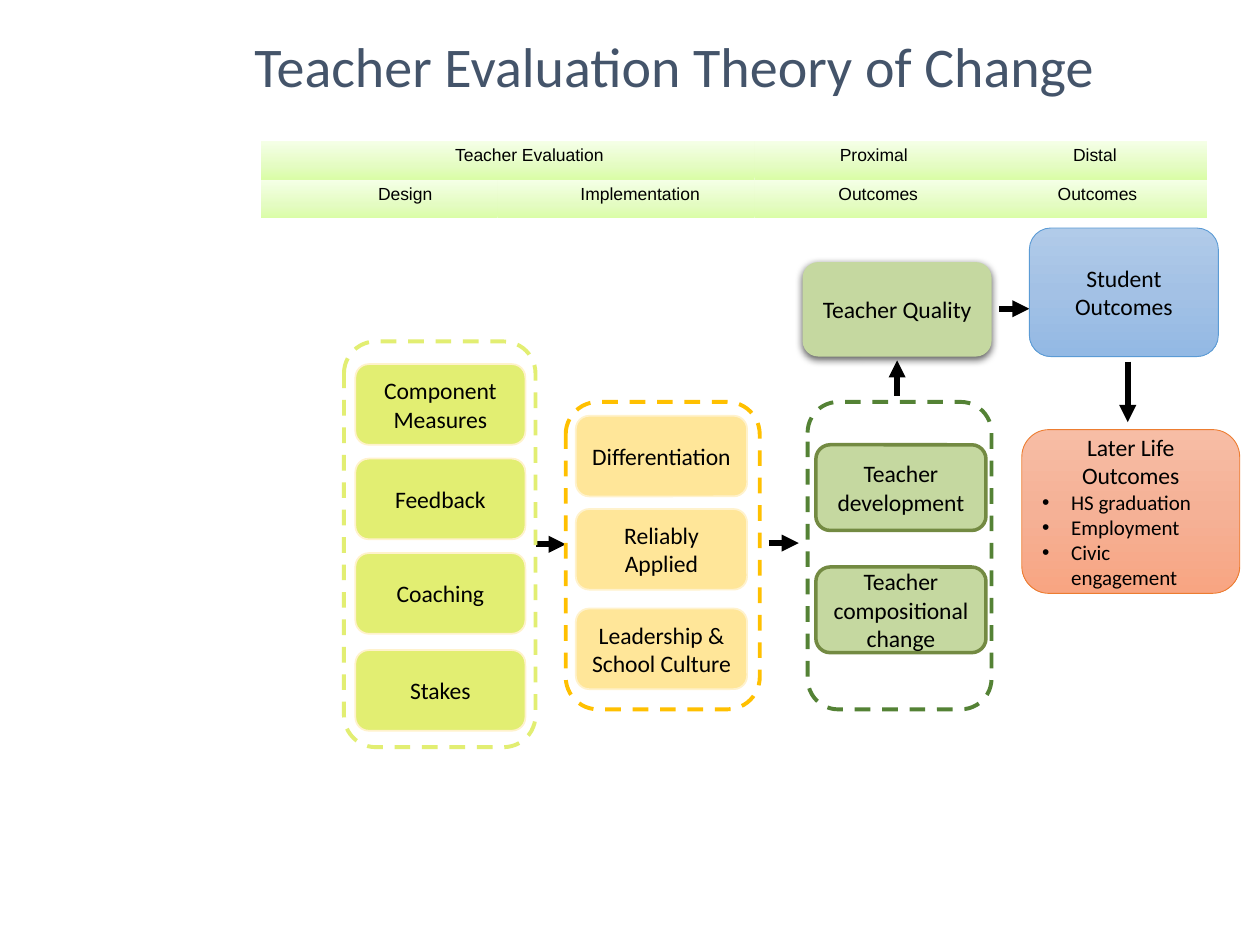
from typing import Any, NamedTuple

from pptx import Presentation
from pptx.dml.color import RGBColor
from pptx.enum.dml import MSO_LINE_DASH_STYLE as Dash
from pptx.enum.shapes import MSO_CONNECTOR as Connector, MSO_SHAPE as Preset
from pptx.enum.text import MSO_ANCHOR as Anchor, PP_ALIGN as Align
from pptx.oxml import parse_xml
from pptx.oxml.ns import nsdecls, qn
from pptx.util import Inches, Pt

# The slide is a grid of 100 columns by 75 rows
COLUMNS, ROWS = 100, 75
WIDTH, HEIGHT = Inches(10), Inches(7.5)
NO_STYLE = "{2D5ABB26-0587-4C30-8999-92F81FD0307C}"
BLACK = "000000"
UP, DOWN = 90, 270


class Area(NamedTuple):
    left: float
    top: float
    width: float
    height: float


class Look(NamedTuple):
    fill: str | list[tuple[int, str]] | None
    line: str | None = None
    weight: float = 1
    dashed: bool = False


class Card(NamedTuple):
    text: str
    area: Area
    look: Look


class Stack(NamedTuple):
    frame: Area
    frame_color: str
    card_left: float
    card_size: tuple[float, float]
    look: Look
    cards: list[tuple[float, str]]


class Arrow(NamedTuple):
    start: tuple[float, float]
    tip: tuple[float, float]


class Label(NamedTuple):
    row: int
    column: int
    text: str
    indent: float


LIME = Look("E2EE72", "FFF2CC")
AMBER = Look("FFE699", "FFF2CC")
GREEN = Look("C5D8A0", "738A42", 2)
BLUE = Look([(0, "B1CBE9"), (50, "A3C1E5"), (100, "93B9E4")], "5B9BD5", 0.5)
ORANGE = Look([(0, "F7BDA5"), (50, "F5B196"), (100, "F8A582")], "ED7D31", 0.5)
HEADER = [(0, "DAFDA7"), (35, "E4FCC2"), (100, "F5FFE7")]

STACKS = [
    Stack(Area(64.1, 31.9, 14.6, 24.4), "548235", 64.75, (13.5, 6.8), GREEN,
          [(35.3, "Teacher development"), (45, "Teacher compositional change")]),
    Stack(Area(44.9, 31.9, 15.4, 24.4), "FFC000", 45.7, (13.6, 6.4), AMBER,
          [(33, "Differentiation"), (40.4, "Reliably\nApplied"),
           (48.3, "Leadership & School Culture")]),
    Stack(Area(27.3, 27.1, 15.2, 32.2), "E2EE72", 28.2, (13.5, 6.4), LIME,
          [(28.9, "Component Measures"), (36.4, "Feedback"),
           (43.9, "Coaching"), (51.6, "Stakes")]),
]
QUALITY = Card("Teacher Quality", Area(63.7, 20.8, 15, 7.5), Look("C5D8A0"))
STUDENT = Card("Student Outcomes", Area(81.7, 18.1, 15, 10.2), BLUE)
LATER_LIFE = Card("Later Life Outcomes", Area(81.1, 34.1, 17.3, 13), ORANGE)
LATER_LIFE_POINTS = ["HS graduation", "Employment", "Civic engagement"]

ARROWS = [
    Arrow((42.5, 43.2), (44.9, 43.2)),
    Arrow((61, 43.1), (63.4, 43.1)),
    Arrow((71.2, 31.4), (71.2, 28.6)),
    Arrow((79.3, 24.5), (81.7, 24.5)),
    Arrow((89.5, 28.7), (89.5, 33.5)),
]

HEADER_AREA = Area(20.7, 11.2, 75, 6.1)
HEADER_COLUMNS = [18.8, 20.4, 17.1, 18.8]
LABELS = [
    Label(0, 0, "Teacher Evaluation", 3.4), Label(0, 2, "Proximal", 1.8),
    Label(0, 3, "Distal", 1), Label(1, 0, "Design", 4.1),
    Label(1, 1, "Implementation", 2.2), Label(1, 2, "Outcomes", 2.5),
    Label(1, 3, "Outcomes", 1.4),
]


def across(columns: float) -> int:
    return round(WIDTH * columns / COLUMNS)


def down(rows: float) -> int:
    return round(HEIGHT * rows / ROWS)


def place(area: Area) -> tuple[int, int, int, int]:
    return across(area.left), down(area.top), across(area.width), down(area.height)


def color(value: str) -> RGBColor:
    return RGBColor.from_string(value)


def style_text(para: Any, size: float, font: str = "Calibri", ink: str = BLACK) -> None:
    for span in para.runs:
        span.font.size, span.font.name = Pt(size), font
        span.font.color.rgb = color(ink)


def fill_gradient(fill: Any, element: Any, stops: list[tuple[int, str]], angle: int) -> None:
    fill.gradient()
    fill.gradient_angle = angle
    stop_list = element.find(".//" + qn("a:gsLst"))
    for stop in list(stop_list):
        stop_list.remove(stop)
    for position, value in stops:
        stop_list.append(parse_xml(
            f'<a:gs {nsdecls("a")} pos="{position * 1000}"><a:srgbClr val="{value}"/></a:gs>'))


def add_box(page: Any, area: Area, look: Look) -> Any:
    box = page.shapes.add_shape(Preset.ROUNDED_RECTANGLE, *place(area))
    box.shadow.inherit = False
    if look.fill is None:
        box.fill.background()
    elif isinstance(look.fill, str):
        box.fill.solid()
        box.fill.fore_color.rgb = color(look.fill)
    else:
        fill_gradient(box.fill, box._element, look.fill, DOWN)
    if look.line is None:
        box.line.fill.background()
    else:
        box.line.color.rgb = color(look.line)
        box.line.width = Pt(look.weight)
    if look.dashed:
        box.line.dash_style = Dash.DASH
    return box


def add_card(page: Any, card: Card, inset: float = 0.7) -> Any:
    box = add_box(page, card.area, card.look)
    frame = box.text_frame
    frame.word_wrap, frame.vertical_anchor = True, Anchor.MIDDLE
    frame.margin_left = frame.margin_right = across(inset)
    frame.text = card.text
    for para in frame.paragraphs:
        para.alignment = Align.CENTER
        style_text(para, 13.5)
    return box


def add_stack(page: Any, stack: Stack) -> None:
    for top, text in stack.cards:
        add_card(page, Card(text, Area(stack.card_left, top, *stack.card_size), stack.look))
    add_box(page, stack.frame, Look(None, stack.frame_color, 2.25, True))


def add_bullet(frame: Any, text: str) -> None:
    para = frame.add_paragraph()
    para.text, para.alignment = text, Align.LEFT
    style_text(para, 12)
    settings = para._p.get_or_add_pPr()
    settings.set("marL", str(across(2.3)))
    settings.set("indent", str(-across(2.3)))
    settings.append(parse_xml(f'<a:buFont {nsdecls("a")} typeface="Arial"/>'))
    settings.append(parse_xml(f'<a:buChar {nsdecls("a")} char="•"/>'))


def add_shadow(box: Any) -> None:
    box._element.spPr.find(qn("a:effectLst")).append(parse_xml(
        f'<a:outerShdw {nsdecls("a")} blurRad="{Pt(4.5)}" dist="{Pt(1.5)}" dir="5400000" '
        'rotWithShape="0"><a:srgbClr val="000000"><a:alpha val="63000"/></a:srgbClr>'
        '</a:outerShdw>'))


def add_arrow(page: Any, arrow: Arrow) -> None:
    (x1, y1), (x2, y2) = arrow
    line = page.shapes.add_connector(
        Connector.STRAIGHT, across(x1), down(y1), across(x2), down(y2))
    line.line.color.rgb, line.line.width = color(BLACK), Pt(3.25)
    line.line._get_or_add_ln().append(parse_xml(f'<a:tailEnd {nsdecls("a")} type="triangle"/>'))
    line._element.spPr.append(parse_xml(f'<a:effectLst {nsdecls("a")}/>'))


def add_header(page: Any) -> None:
    holder = page.shapes.add_table(2, len(HEADER_COLUMNS), *place(HEADER_AREA))
    table = holder.table
    holder._element.find(".//" + qn("a:tableStyleId")).text = NO_STYLE
    table.first_row = table.horz_banding = False
    for column, width in zip(table.columns, HEADER_COLUMNS):
        column.width = across(width)
    table.cell(0, 0).merge(table.cell(0, 1))
    for label in LABELS:
        cell = table.cell(label.row, label.column)
        fill_gradient(cell.fill, cell._tc, HEADER, UP)
        cell.margin_left, cell.margin_right = across(0.7 + label.indent), across(0.7)
        cell.margin_top = cell.margin_bottom = down(0.4)
        cell.text = label.text
        para = cell.text_frame.paragraphs[0]
        para.alignment = Align.CENTER
        style_text(para, 10, "Arial")


def add_title(page: Any) -> None:
    box = page.shapes.add_textbox(*place(Area(19.2, 2.2, 92.5, 6.6)))
    frame = box.text_frame
    frame.word_wrap, frame.vertical_anchor = True, Anchor.MIDDLE
    frame.text = "Teacher Evaluation Theory of Change"
    frame.paragraphs[0].line_spacing = 0.9
    style_text(frame.paragraphs[0], 32, ink="44546A")


def main() -> None:
    deck = Presentation()
    deck.slide_width, deck.slide_height = WIDTH, HEIGHT
    page = deck.slides.add_slide(deck.slide_layouts[6])
    # Title and column headings
    add_title(page)
    add_header(page)
    # Arrows below the framed stacks
    for arrow in ARROWS:
        add_arrow(page, arrow)
    for stack in STACKS:
        add_stack(page, stack)
    # Outcome cards
    add_shadow(add_card(page, QUALITY))
    add_card(page, STUDENT)
    later_life = add_card(page, LATER_LIFE, inset=1)
    for point in LATER_LIFE_POINTS:
        add_bullet(later_life.text_frame, point)
    deck.save("out.pptx")


if __name__ == "__main__":
    main()
